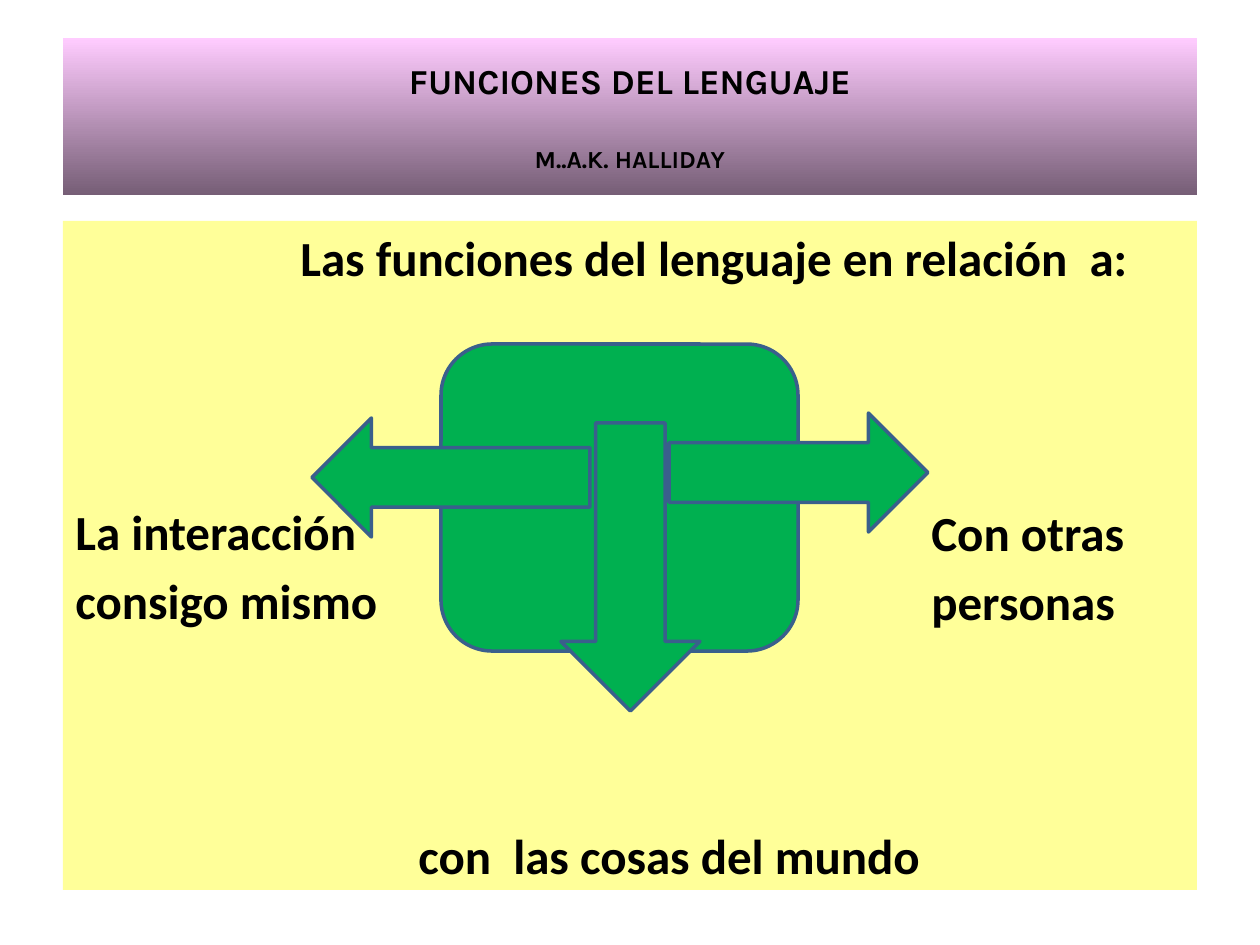
from collections import namedtuple
from dataclasses import dataclass

from pptx import Presentation
from pptx import util as u
from pptx.dml.color import RGBColor
from pptx.enum import shapes, text

Box = namedtuple("Box", "left top width height")
FORMS = shapes.MSO_SHAPE


@dataclass(frozen=True)
class Theme:
    ink: str = "000000"
    band_top: str = "FFCCFF"
    band_bottom: str = "765E76"
    panel: str = "FFFF99"
    green: str = "00B050"
    outline: str = "3A5F8C"
    title_font: str = "Karla"
    body_font: str = "Calibri"
    title_size: int = 20
    author_size: int = 14
    body_size: int = 28
    line_gap: int = 6
    line_width: int = 2


THEME = Theme()


def px(count):
    """Turn pixels (126 to the inch) into EMU."""
    return u.Emu(round(count * u.Inches(1) / 126))


def add_form(page, form, box):
    shape = page.shapes.add_shape(form, *map(px, box))
    shape.shadow.inherit = False
    shape.line.fill.background()
    return shape


def fill_solid(shape, color):
    shape.fill.solid()
    shape.fill.fore_color.rgb = RGBColor.from_string(color)


def add_para(frame, index, words, font, size, align, before):
    para = frame.add_paragraph() if index else frame.paragraphs[0]
    para.text = words
    para.alignment = align
    para.space_before = u.Pt(before)
    para.font.name = font
    para.font.size = u.Pt(size)
    para.font.bold = True
    para.font.color.rgb = RGBColor.from_string(THEME.ink)
    return para


def add_title(page, box):
    band = add_form(page, FORMS.RECTANGLE, box)
    # Gradient from top to bottom
    band.fill.gradient()
    band.fill.gradient_angle = 270
    colors = (THEME.band_top, THEME.band_bottom)
    for stop, color, position in zip(band.fill.gradient_stops, colors, (0, 1)):
        stop.color.rgb = RGBColor.from_string(color)
        stop.position = position
    # Title and author
    frame = band.text_frame
    frame.word_wrap = True
    frame.vertical_anchor = text.MSO_ANCHOR.MIDDLE
    lines = (("FUNCIONES DEL LENGUAJE", THEME.title_size, 0),
             ("M..A.K. HALLIDAY", THEME.author_size, 24))
    for index, (words, size, before) in enumerate(lines):
        add_para(frame, index, words, THEME.title_font, size,
                 text.PP_ALIGN.CENTER, before)


def write_body(shape, lines):
    """Write lines of words, indent in pixels and space before in points."""
    frame = shape.text_frame
    frame.word_wrap = True
    frame.vertical_anchor = text.MSO_ANCHOR.TOP
    for index, (words, indent, before) in enumerate(lines):
        para = add_para(frame, index, words, THEME.body_font, THEME.body_size,
                        text.PP_ALIGN.LEFT, before)
        para._p.get_or_add_pPr().set("marL", str(px(indent)))


def add_body(page, box):
    # Panel with heading, left label and bottom label
    panel = add_form(page, FORMS.RECTANGLE, box)
    fill_solid(panel, THEME.panel)
    write_body(panel, (("Las funciones del lenguaje en relación  a:", 225, 0),
                       ("La interacción", 0, 123),
                       ("consigo mismo", 0, THEME.line_gap),
                       ("con  las cosas del mundo", 343, 112)))
    # Right label, level with the left one
    label = page.shapes.add_textbox(
        *map(px, (box.left + 856, box.top + 275, 250, 144)))
    write_body(label, (("Con otras", 0, 0),
                       ("personas", 0, THEME.line_gap)))


def add_diagram(page, box):
    # Central block and its three arrows, offset from the box corner
    parts = ((FORMS.ROUNDED_RECTANGLE, 129, 0, 357, 307),
             (FORMS.LEFT_ARROW, 0, 74, 278, 119),
             (FORMS.DOWN_ARROW, 249, 79, 139, 288),
             (FORMS.RIGHT_ARROW, 357, 69, 259, 119))
    for form, left, top, width, height in parts:
        shape = add_form(page, form,
                         Box(box.left + left, box.top + top, width, height))
        fill_solid(shape, THEME.green)
        shape.line.color.rgb = RGBColor.from_string(THEME.outline)
        shape.line.width = u.Pt(THEME.line_width)


def main():
    deck = Presentation()
    deck.slide_width, deck.slide_height = px(1260), px(945)
    page = deck.slides.add_slide(deck.slide_layouts[6])
    add_title(page, Box(63, 38, 1134, 157))
    add_body(page, Box(63, 221, 1134, 669))
    add_diagram(page, Box(312, 344, 616, 367))
    deck.save("out.pptx")


if __name__ == "__main__":
    main()
